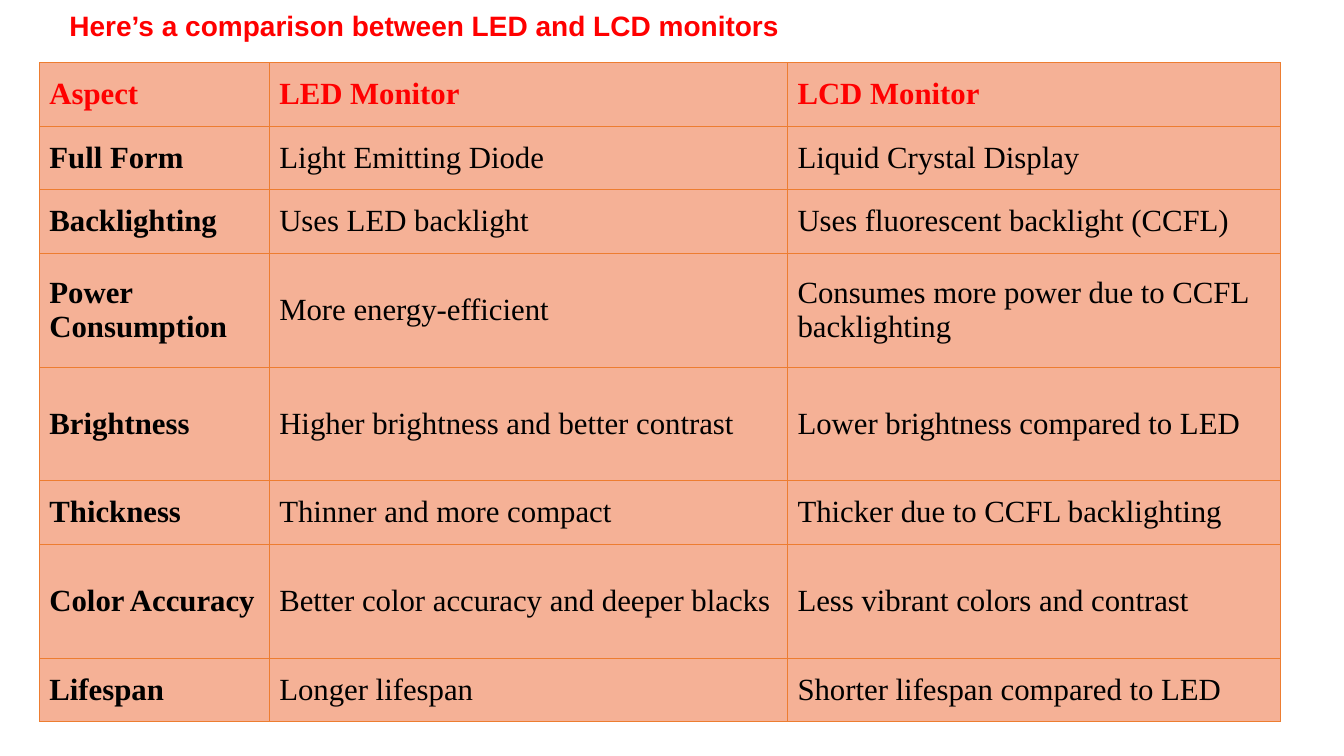
from dataclasses import dataclass

from lxml.etree import SubElement
from pptx import Presentation
from pptx.dml.color import RGBColor
from pptx.enum.text import MSO_ANCHOR, MSO_AUTO_SIZE
from pptx.oxml.ns import qn
from pptx.slide import Slide
from pptx.table import _Cell
from pptx.text.text import _Paragraph
from pptx.util import Inches, Pt


@dataclass(frozen=True)
class Theme:
    accent: str = "FF0000"
    text: str = "000000"
    cell_fill: str = "F5B196"
    border: str = "ED7D31"
    border_width: float = 0.5
    title_font: str = "Arial"
    title_size: int = 20
    table_font: str = "Times New Roman"
    table_size: int = 22


@dataclass(frozen=True)
class ComparisonRow:
    aspect: str
    led: str
    lcd: str
    height: float = 0.63


THEME = Theme()
TALL = 1.13
COLUMN_WIDTHS = (2.28, 5.14, 4.89)
TITLE = "Here’s a comparison between LED and LCD monitors"
ROWS = (
    ComparisonRow("Aspect", "LED Monitor", "LCD Monitor"),
    ComparisonRow("Full Form", "Light Emitting Diode", "Liquid Crystal Display"),
    ComparisonRow("Backlighting", "Uses LED backlight", "Uses fluorescent backlight (CCFL)"),
    ComparisonRow("Power Consumption", "More energy-efficient",
                  "Consumes more power due to CCFL backlighting", TALL),
    ComparisonRow("Brightness", "Higher brightness and better contrast",
                  "Lower brightness compared to LED", TALL),
    ComparisonRow("Thickness", "Thinner and more compact", "Thicker due to CCFL backlighting"),
    ComparisonRow("Color Accuracy", "Better color accuracy and deeper blacks",
                  "Less vibrant colors and contrast", TALL),
    ComparisonRow("Lifespan", "Longer lifespan", "Shorter lifespan compared to LED"),
)


def add_run(paragraph: _Paragraph, text: str, font: str, size: int, color: str, bold: bool) -> None:
    run = paragraph.add_run()
    run.text = text
    run.font.name = font
    run.font.size = Pt(size)
    run.font.bold = bold
    run.font.color.rgb = RGBColor.from_string(color)


def set_borders(cell: _Cell) -> None:
    """Outline all four sides; borders must precede the fill in the cell's XML."""
    properties = cell._tc.get_or_add_tcPr()
    for side in ("a:lnL", "a:lnR", "a:lnT", "a:lnB"):
        line = SubElement(properties, qn(side), w=str(Pt(THEME.border_width)))
        fill = SubElement(line, qn("a:solidFill"))
        SubElement(fill, qn("a:srgbClr"), val=THEME.border)


def fill_cell(cell: _Cell, text: str, color: str, bold: bool) -> None:
    set_borders(cell)
    cell.fill.solid()
    cell.fill.fore_color.rgb = RGBColor.from_string(THEME.cell_fill)
    cell.vertical_anchor = MSO_ANCHOR.MIDDLE
    paragraph = cell.text_frame.paragraphs[0]
    add_run(paragraph, text, THEME.table_font, THEME.table_size, color, bold)


def add_title(slide: Slide) -> None:
    shape = slide.shapes.add_textbox(Inches(0.59), Inches(0.03), Inches(7.37), Inches(0.44))
    frame = shape.text_frame
    frame.word_wrap = False
    frame.auto_size = MSO_AUTO_SIZE.SHAPE_TO_FIT_TEXT
    frame.vertical_anchor = MSO_ANCHOR.MIDDLE
    add_run(frame.paragraphs[0], TITLE, THEME.title_font, THEME.title_size, THEME.accent, True)


def add_comparison_table(slide: Slide) -> None:
    width = sum(COLUMN_WIDTHS)
    height = sum(row.height for row in ROWS)
    table = slide.shapes.add_table(
        len(ROWS), len(COLUMN_WIDTHS),
        Inches(0.39), Inches(0.62), Inches(width), Inches(height),
    ).table
    table.horz_banding = False
    for column, column_width in zip(table.columns, COLUMN_WIDTHS):
        column.width = Inches(column_width)
    for row_index, row in enumerate(ROWS):
        table.rows[row_index].height = Inches(row.height)
        is_header = row_index == 0
        color = THEME.accent if is_header else THEME.text
        for column_index, text in enumerate((row.aspect, row.led, row.lcd)):
            bold = is_header or column_index == 0
            fill_cell(table.cell(row_index, column_index), text, color, bold)


def main() -> None:
    presentation = Presentation()
    presentation.slide_width = Inches(13.33)
    presentation.slide_height = Inches(7.5)
    slide = presentation.slides.add_slide(presentation.slide_layouts[6])
    add_comparison_table(slide)
    add_title(slide)
    presentation.save("out.pptx")


if __name__ == "__main__":
    main()
